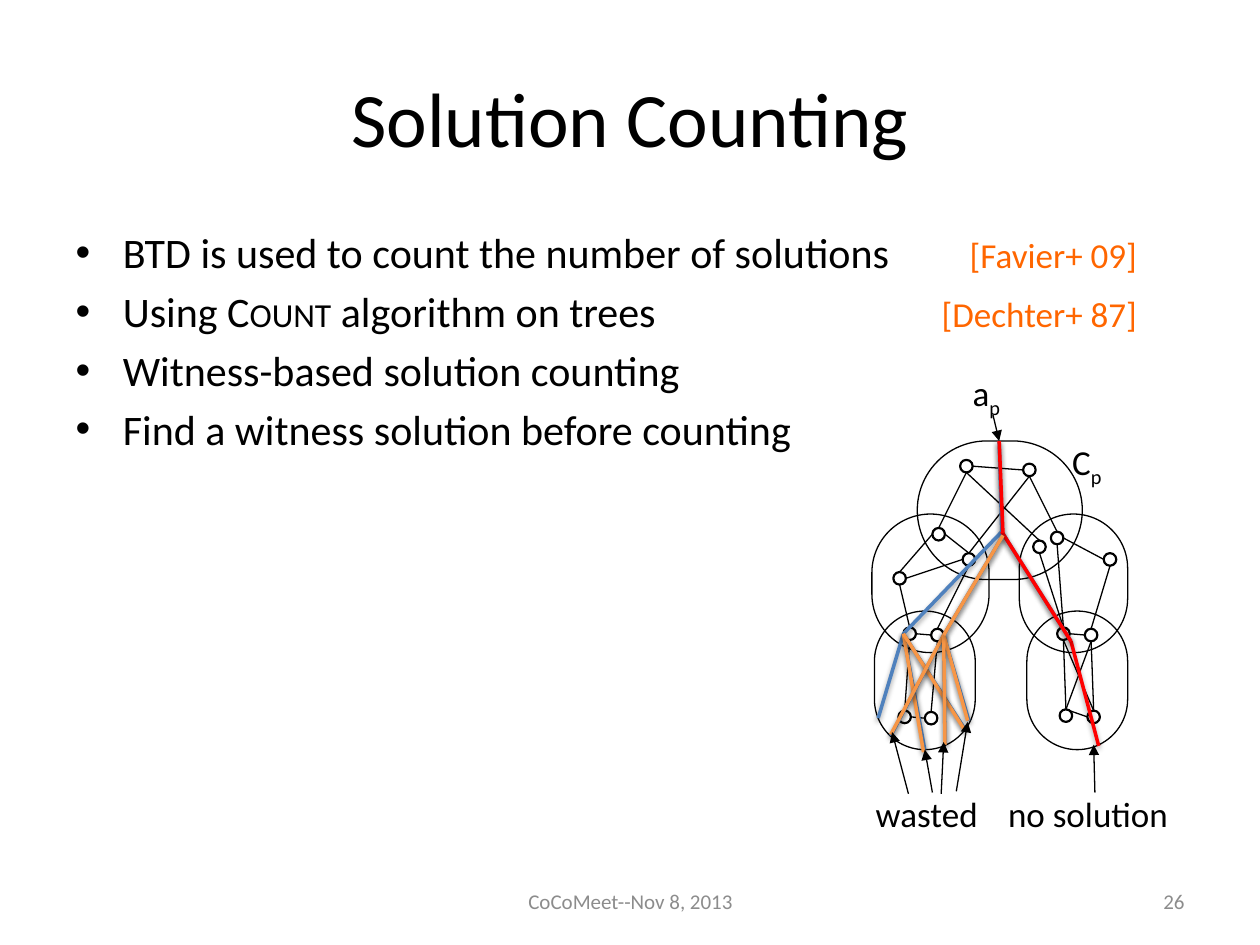
from lxml import etree
from pptx import Presentation
from pptx.dml.color import RGBColor
from pptx.enum.shapes import MSO_CONNECTOR as CONN, MSO_SHAPE as SHAPE
from pptx.enum.text import MSO_ANCHOR as ANCHOR, PP_ALIGN as ALIGN
from pptx.oxml import parse_xml
from pptx.oxml.ns import nsdecls, qn
from pptx.util import Inches, Pt

BLACK = RGBColor(0x00, 0x00, 0x00)
GRAY = RGBColor(0x8C, 0x8C, 0x8C)
CITE = RGBColor(0xFF, 0x66, 0x00)
BLUE = RGBColor(0x4F, 0x81, 0xBD)
ORANGE = RGBColor(0xF7, 0x96, 0x46)
RED = RGBColor(0xFF, 0x00, 0x00)
FONT = "Calibri"
TOP, LEFT, BOTTOM, RIGHT = range(4)

BULLETS = [
    [("BTD is used to count the number of solutions\t", {}), ("[Favier+ 09]", {"cite": True})],
    [("Using ", {}), ("Count", {"small": True}), (" algorithm on trees \t", {}),
     ("[Dechter+ 87]", {"cite": True})],
    [("Witness-based solution counting", {})],
    [("Find a witness solution before counting", {})],
]

# All diagram positions are inches from the diagram's top left corner.
NODE = 0.1
NODES = {
    "r1": (0.72, 0.75), "r2": (1.22, 0.78),
    "l1": (0.5, 1.29), "l2": (0.74, 1.49), "l3": (0.19, 1.64),
    "m1": (1.3, 1.39), "m2": (1.44, 1.32), "m3": (1.86, 1.49),
    "a1": (0.27, 2.08), "a2": (0.49, 2.09), "a3": (0.23, 2.74), "a4": (0.44, 2.75),
    "b1": (1.49, 2.08), "b2": (1.71, 2.09), "b3": (1.51, 2.73), "b4": (1.73, 2.74),
}
CLUSTERS = [(0.38, 0.6, 1.31), (0.02, 1.18, 0.93), (1.19, 1.18, 0.86),
            (0.04, 1.95, 0.8), (1.25, 1.95, 0.8)]
CLUSTER_H = 1.1
EDGES = [
    ("r1", RIGHT, "r2", LEFT), ("r1", BOTTOM, "l1", TOP), ("l2", TOP, "r2", BOTTOM),
    ("r1", BOTTOM, "m1", TOP), ("r2", BOTTOM, "m2", TOP), ("m2", RIGHT, "m3", LEFT),
    ("m1", BOTTOM, "b1", TOP), ("m2", BOTTOM, "b1", TOP), ("m3", BOTTOM, "b2", TOP),
    ("b1", RIGHT, "b2", LEFT), ("l1", LEFT, "l3", TOP), ("l3", BOTTOM, "a1", TOP),
    ("a1", RIGHT, "a2", LEFT), ("l2", BOTTOM, "a2", TOP), ("l3", RIGHT, "l2", LEFT),
    ("l1", RIGHT, "l2", TOP), ("a1", BOTTOM, "a3", TOP), ("a4", LEFT, "a3", RIGHT),
    ("a2", BOTTOM, "a4", TOP), ("b2", BOTTOM, "b3", TOP), ("b1", BOTTOM, "b3", TOP),
    ("b3", TOP, "b4", LEFT), ("b4", TOP, "b1", BOTTOM), ("b4", TOP, "b2", BOTTOM),
]
ENTRY, ROOT, ROOT_LOW = (1.03, 0.6), (1.05, 1.32), (1.06, 1.35)
WEST, MID, EAST = (0.27, 2.13), (0.59, 2.14), (1.6, 2.19)
BRANCHES = [
    (BLUE, [(ENTRY, ROOT), (ROOT, EAST), (ROOT, WEST), (WEST, (0.44, 3.05)),
            (WEST, (0.07, 2.8)), (WEST, (0.76, 2.89))]),
    (ORANGE, [(WEST, (0.43, 3.07)), (WEST, (0.76, 2.9))]),
    (RED, [(EAST, (1.82, 3.02)), (ROOT, EAST), (ENTRY, (1.06, 1.33))]),
    (BLUE, [(ROOT_LOW, MID), (MID, (0.17, 2.94)), (MID, (0.6, 3)), (MID, (0.79, 2.82))]),
    (ORANGE, [(MID, (0.17, 2.93)), (MID, (0.78, 2.82)), (MID, (0.6, 3.01)), (ROOT_LOW, MID)]),
]
POINTERS = [((0.98, 0.39), ENTRY), ((0.5, 3.39), (0.44, 3.05)), ((0.57, 3.4), (0.59, 2.99)),
            ((1.79, 3.39), (1.78, 3.01)), ((0.31, 3.4), (0.18, 2.91)),
            ((0.69, 3.38), (0.78, 2.83))]
LABELS = [("C", "p", 1.61, 0.6, 0.33), ("a", "p", 0.82, 0.05, 0.33),
          ("wasted", "", 0.05, 3.39, 0.91), ("no solution", "", 1.1, 3.39, 1.38)]


def add_run(p, text, size, color=BLACK):
    r = p.add_run()
    r.text = text
    for name, value in {"name": FONT, "size": Pt(size)}.items():
        setattr(r.font, name, value)
    r.font.color.rgb = color
    return r


def place(sp, box):
    for name, value in zip(("left", "top", "width", "height"), box):
        setattr(sp, name, Inches(value))


def add_text(slide, box, **frame):
    sp = slide.shapes.add_textbox(*map(Inches, box))
    for name, value in {"word_wrap": True, **frame}.items():
        setattr(sp.text_frame, name, value)
    return sp.text_frame.paragraphs[0]


def add_title(slide, box):
    sp = slide.shapes.title
    place(sp, box)
    sp.text_frame.vertical_anchor = ANCHOR.MIDDLE
    p = sp.text_frame.paragraphs[0]
    p.alignment = ALIGN.CENTER
    add_run(p, "Solution Counting", 44)


def add_bullets(slide, box):
    sp = slide.placeholders[1]
    place(sp, box)
    tf = sp.text_frame
    for i, parts in enumerate(BULLETS):
        p = tf.add_paragraph() if i else tf.paragraphs[0]
        if len(parts) > 1:
            tabs = etree.SubElement(p._p.get_or_add_pPr(), qn("a:tabLst"))
            etree.SubElement(tabs, qn("a:tab"), pos=str(Inches(8.75)), algn="r")
        for text, style in parts:
            cite = style.get("cite")
            r = add_run(p, text, 20 if cite else 24, CITE if cite else BLACK)
            if style.get("small"):
                r.font._element.set("cap", "small")


def add_footer(slide, top):
    for text, left, width, align in [("CoCoMeet--Nov 8, 2013", 3.42, 3.17, ALIGN.CENTER),
                                     ("26", 7.17, 2.33, ALIGN.RIGHT)]:
        p = add_text(slide, (left, top, width, 0.4), vertical_anchor=ANCHOR.MIDDLE)
        p.alignment = align
        add_run(p, text, 12, GRAY)


def add_outline(slide, box, weight):
    sp = slide.shapes.add_shape(SHAPE.ROUNDED_RECTANGLE, *map(Inches, box))
    sp.adjustments[0] = 0.5
    sp.shadow.inherit = False
    sp.fill.background()
    sp.line.color.rgb = BLACK
    sp.line.width = Pt(weight)
    return sp


def add_line(slide, start=(0, 0), end=(0, 0), color=BLACK, weight=0.75, arrow=False, shadow=False):
    cn = slide.shapes.add_connector(CONN.STRAIGHT, *map(Inches, start + end))
    cn.line.color.rgb = color
    cn.line.width = Pt(weight)
    if arrow:
        etree.SubElement(cn.line._get_or_add_ln(), qn("a:tailEnd"), type="triangle")
    effect = ('<a:outerShdw blurRad="40000" dist="20000" dir="5400000" rotWithShape="0">'
              '<a:srgbClr val="000000"><a:alpha val="38000"/></a:srgbClr></a:outerShdw>')
    cn._element.spPr.append(parse_xml(
        f'<a:effectLst {nsdecls("a")}>{effect if shadow else ""}</a:effectLst>'))
    return cn


def add_tree(slide, left, top):
    """Draw the cluster tree with its search branches, pointers and labels."""
    def at(point):
        return left + point[0], top + point[1]

    for x, y, width in CLUSTERS:
        add_outline(slide, (*at((x, y)), width, CLUSTER_H), 0.75)
    nodes = {name: add_outline(slide, (*at(point), NODE, NODE), 1.25)
             for name, point in NODES.items()}
    for a, a_side, b, b_side in EDGES:
        cn = add_line(slide)
        cn.begin_connect(nodes[a], a_side)
        cn.end_connect(nodes[b], b_side)
    for color, lines in BRANCHES:
        for start, end in lines:
            add_line(slide, at(start), at(end), color, 2, shadow=True)
    for start, end in POINTERS:
        add_line(slide, at(start), at(end), arrow=True)
    margins = dict.fromkeys(("margin_left", "margin_top", "margin_right", "margin_bottom"), 0)
    for text, sub, x, y, width in LABELS:
        p = add_text(slide, (*at((x, y)), width, 0.34), **margins)
        add_run(p, text, 20)
        if sub:
            add_run(p, sub, 20).font._element.set("baseline", "-25000")


def main():
    prs = Presentation()
    prs.slide_width, prs.slide_height = Inches(10), Inches(7.5)
    slide = prs.slides.add_slide(prs.slide_layouts[1])
    add_title(slide, (0.5, 0.3, 9, 1.25))
    add_bullets(slide, (0.5, 1.75, 9, 4.95))
    add_footer(slide, 6.95)
    add_tree(slide, 6.9, 2.9)
    prs.save("out.pptx")


if __name__ == "__main__":
    main()
